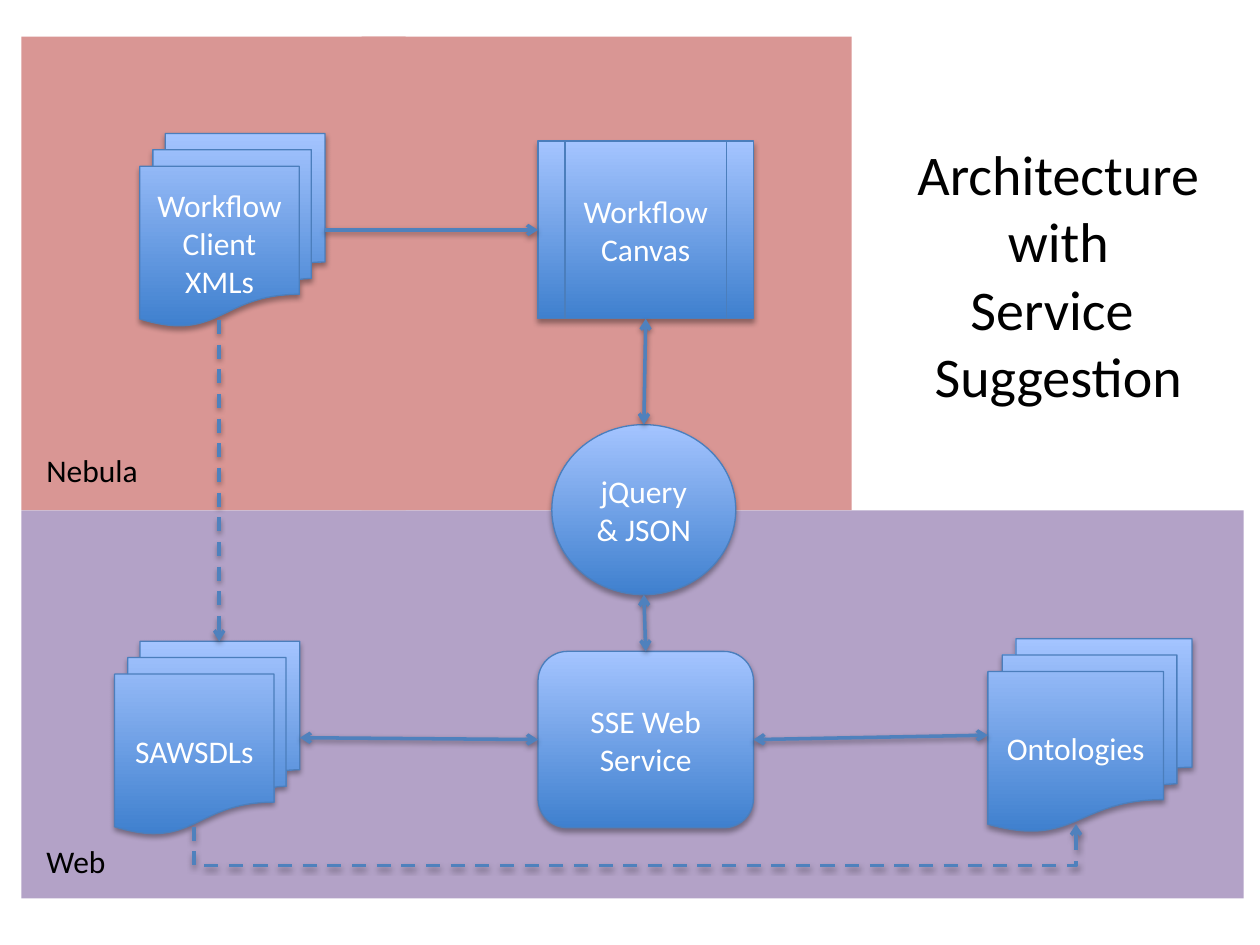
from dataclasses import dataclass
from typing import Optional

from lxml import etree
from pptx import Presentation
from pptx import util as u
from pptx.dml.color import RGBColor
from pptx.enum import dml, shapes, text
from pptx.oxml import ns

PX = 9144  # EMU in one px, 100 px to the inch
FONT = "Calibri"
HUES = {
    "web": "B3A2C7", "app": "D99694", "low": "3F80CE", "high": "A4C4FF",
    "edge": "4B7EBC", "link": "4F81BD", "white": "FFFFFF", "black": "000000",
}
KIND = shapes.MSO_SHAPE
TOP, LEFT, BASE, RIGHT = range(4)


@dataclass
class Box:
    x: int
    y: int
    w: int
    h: int


@dataclass
class Node:
    key: str
    kind: shapes.MSO_SHAPE
    box: Box
    words: str


@dataclass
class Label:
    box: Box
    words: str
    size: int = 18
    align: text.PP_ALIGN = text.PP_ALIGN.LEFT


@dataclass
class Link:
    start: tuple[int, int]
    end: tuple[int, int]
    tail: Optional[tuple[str, int]] = None  # node and side at the start
    tip: Optional[tuple[str, int]] = None   # node and side at the end
    both: bool = True
    dash: bool = False


ZONES = [
    ("web", Box(17, 405, 970, 308)),
    ("app", Box(287, 29, 389, 376)),
    ("app", Box(17, 29, 305, 376)),
]
DOCS = KIND.FLOWCHART_MULTIDOCUMENT
NODES = [
    Node("client", DOCS, Box(111, 106, 147, 153), "Workflow Client\nXMLs"),
    Node("canvas", KIND.FLOWCHART_PREDEFINED_PROCESS, Box(427, 112, 171, 141), "Workflow Canvas"),
    Node("query", KIND.FLOWCHART_CONNECTOR, Box(438, 337, 146, 135), "jQuery & JSON"),
    Node("sawsdl", DOCS, Box(91, 509, 147, 153), "SAWSDLs"),
    Node("sse", KIND.FLOWCHART_ALTERNATE_PROCESS, Box(427, 517, 171, 140), "SSE Web Service"),
    Node("onto", DOCS, Box(784, 507, 162, 153), "Ontologies"),
]
LABELS = [
    Label(Box(27, 353, 105, 40), "Nebula"),
    Label(Box(27, 663, 68, 40), "Web"),
    Label(Box(716, 106, 248, 226), "Architecture\nwith\nService \vSuggestion",
          32, text.PP_ALIGN.CENTER),
]
LINKS = [
    Link((512, 254), (511, 337), ("canvas", BASE), ("query", TOP)),
    Link((511, 472), (512, 517), None, ("sse", TOP)),
    Link((598, 587), (784, 584), ("sse", RIGHT), ("onto", LEFT)),
    Link((174, 254), (174, 509), both=False, dash=True),
    Link((258, 183), (427, 183), ("client", RIGHT), ("canvas", LEFT), both=False),
    Link((238, 586), (427, 587), ("sawsdl", RIGHT), ("sse", LEFT)),
]


def hue(name: str) -> RGBColor:
    return RGBColor.from_string(HUES[name])


def area(box: Box) -> list[int]:
    return [n * PX for n in (box.x, box.y, box.w, box.h)]


def shade(item, dist: int, alpha: int) -> None:
    """Give a shape or connector a soft shadow below it."""
    props = item._element.spPr
    fx = props.find(ns.qn("a:effectLst"))
    if fx is None:
        fx = etree.SubElement(props, ns.qn("a:effectLst"))
    cast = etree.SubElement(fx, ns.qn("a:outerShdw"), blurRad="40000",
                            dist=str(dist), dir="5400000", rotWithShape="0")
    tint = etree.SubElement(cast, ns.qn("a:srgbClr"), val=HUES["black"])
    etree.SubElement(tint, ns.qn("a:alpha"), val=str(alpha * 1000))


def write(frame, words: str, size: int, color: str, align: text.PP_ALIGN) -> None:
    frame.text = words
    for para in frame.paragraphs:
        para.alignment = align
        para.font.size = u.Pt(size)
        para.font.name = FONT
        para.font.color.rgb = hue(color)


def draw_zone(slide, color: str, box: Box) -> None:
    zone = slide.shapes.add_shape(KIND.RECTANGLE, *area(box))
    zone.shadow.inherit = False
    zone.fill.solid()
    zone.fill.fore_color.rgb = hue(color)
    zone.line.fill.background()


def draw_node(slide, node: Node):
    item = slide.shapes.add_shape(node.kind, *area(node.box))
    item.fill.gradient()
    item.fill.gradient_angle = 90
    for stop, name in zip(item.fill.gradient_stops, ("low", "high")):
        stop.color.rgb = hue(name)
    item.line.color.rgb = hue("edge")
    item.line.width = u.Pt(0.75)
    item.shadow.inherit = False
    shade(item, 23000, 35)
    item.text_frame.vertical_anchor = text.MSO_ANCHOR.MIDDLE
    write(item.text_frame, node.words, 18, "white", text.PP_ALIGN.CENTER)
    return item


def draw_label(slide, label: Label) -> None:
    frame = slide.shapes.add_textbox(*area(label.box)).text_frame
    frame.word_wrap = False
    frame.auto_size = text.MSO_AUTO_SIZE.SHAPE_TO_FIT_TEXT
    write(frame, label.words, label.size, "black", label.align)


def style(wire, both: bool, dash: bool) -> None:
    wire.line.color.rgb = hue("link")
    wire.line.width = u.Pt(2)
    if dash:
        wire.line.dash_style = dml.MSO_LINE.DASH
    line = wire.get_or_add_ln()
    for end in ("headEnd", "tailEnd") if both else ("tailEnd",):
        etree.SubElement(line, ns.qn("a:" + end), type="arrow")
    shade(wire, 20000, 38)


def draw_link(slide, link: Link, items: dict) -> None:
    ends = [n * PX for n in link.start + link.end]
    wire = slide.shapes.add_connector(shapes.MSO_CONNECTOR.STRAIGHT, *ends)
    if link.tail:
        wire.begin_connect(items[link.tail[0]], link.tail[1])
    if link.tip:
        wire.end_connect(items[link.tip[0]], link.tip[1])
    style(wire, link.both, link.dash)


def draw_bend(slide, box: Box, drop: int) -> None:
    """Draw an elbow turned by 90 degrees that dips below both its ends."""
    x, y, w, h = area(box)
    wire = slide.shapes.add_connector(shapes.MSO_CONNECTOR.ELBOW, x + w, y + h, x, y)
    props = wire._element.spPr
    props.find(ns.qn("a:xfrm")).set("rot", "5400000")
    geom = props.find(ns.qn("a:prstGeom"))
    guides = geom.find(ns.qn("a:avLst"))
    if guides is None:
        guides = etree.SubElement(geom, ns.qn("a:avLst"))
    ratio = -drop * 100000 // box.w
    etree.SubElement(guides, ns.qn("a:gd"), name="adj1", fmla=f"val {ratio}")
    style(wire, False, True)


def main() -> None:
    deck = Presentation()
    deck.slide_width, deck.slide_height = 1000 * PX, 750 * PX
    slide = deck.slides.add_slide(deck.slide_layouts[6])

    # Zones at the back
    for color, box in ZONES:
        draw_zone(slide, color, box)

    # Nodes and labels
    items = {node.key: draw_node(slide, node) for node in NODES}
    for label in LABELS:
        draw_label(slide, label)

    # Arrows
    for link in LINKS:
        draw_link(slide, link, items)
    draw_bend(slide, Box(503, 305, 2, 700), 31)

    deck.save("out.pptx")


if __name__ == "__main__":
    main()
